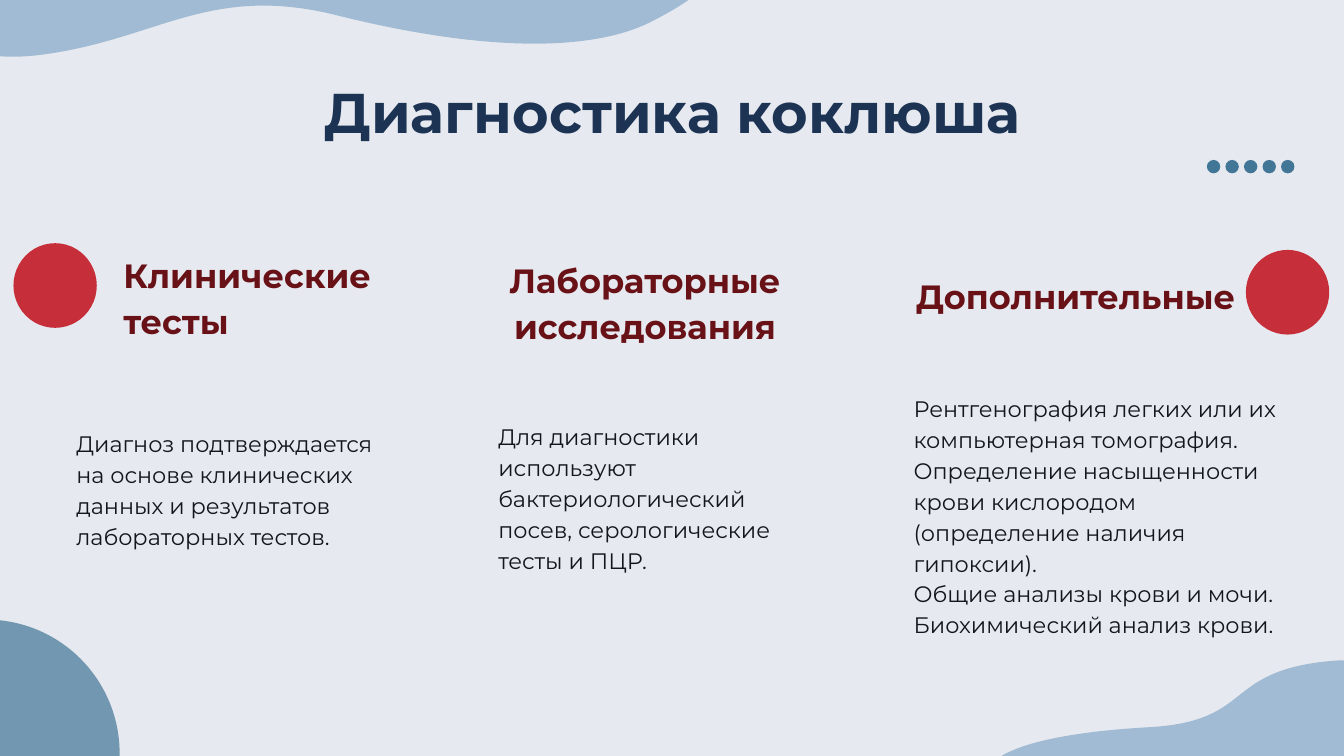
from pptx import Presentation
from pptx.dml.color import RGBColor
from pptx.enum.shapes import MSO_SHAPE as SHAPE
from pptx.enum.text import MSO_ANCHOR as ANCHOR, PP_ALIGN as ALIGN
from pptx.oxml.ns import qn
from pptx.util import Inches, Pt
from lxml import etree

TITLE = dict(size=Pt(30), bold=True, color="1C3354")
HEADING = dict(size=Pt(18), bold=True, color="681218")
BODY = dict(size=Pt(12), bold=False, color="12161D")
HANGING = (0.5, -0.35)


def rgb(value):
    return RGBColor.from_string(value)


class Deck:
    """Holds the style and the current slide."""
    font = "Montserrat"
    spacing = 1.15
    inset = 0.1

    def __init__(self, prs, background):
        self.s = prs.slides.add_slide(prs.slide_layouts[6])
        fill = self.s.background.fill
        fill.solid()
        fill.fore_color.rgb = rgb(background)

    def paint(self, shape, color, alpha=None):
        shape.shadow.inherit = False
        shape.fill.solid()
        shape.fill.fore_color.rgb = rgb(color)
        shape.line.fill.background()
        if alpha:
            clr = shape.fill._xPr.find(".//" + qn("a:srgbClr"))
            etree.SubElement(clr, qn("a:alpha")).set("val", str(alpha * 1000))

    def oval(self, x, y, width, height, color, alpha=None):
        sp = self.s.shapes.add_shape(
            SHAPE.OVAL, *map(Inches, (x, y, width, height)))
        self.paint(sp, color, alpha)

    def wave(self, start, curves, color):
        """Draw a closed outline of cubic curves, each two handles and an end."""
        builder = self.s.shapes.build_freeform(*map(Inches, start))
        builder.add_line_segments(
            [tuple(map(Inches, curve[-1])) for curve in curves], close=True)
        sp = builder.convert_to_shape()
        segments = list(sp._element.iter(qn("a:lnTo")))
        for segment, curve in zip(segments, curves):
            cubic = etree.Element(qn("a:cubicBezTo"))
            for x, y in curve:
                pt = etree.SubElement(cubic, qn("a:pt"))
                pt.set("x", str(Inches(x) - sp.left))
                pt.set("y", str(Inches(y) - sp.top))
            segment.getparent().replace(segment, cubic)
        self.paint(sp, color)

    def text(self, box, lines, style, align=ALIGN.LEFT, anchor=ANCHOR.TOP,
             indent=(0, 0), spacing=spacing, bottom=inset):
        tf = self.s.shapes.add_textbox(*map(Inches, box)).text_frame
        side = Inches(self.inset)
        frame = dict(word_wrap=True, vertical_anchor=anchor, margin_left=side,
                     margin_right=side, margin_top=side,
                     margin_bottom=Inches(bottom))
        for name, value in frame.items():
            setattr(tf, name, value)
        for i, line in enumerate(lines):
            p = tf.add_paragraph() if i else tf.paragraphs[0]
            p.alignment, p.line_spacing = align, spacing
            pPr = p._p.get_or_add_pPr()
            for name, value in zip(("marL", "indent"), indent):
                pPr.set(name, str(Inches(value)))
            r = p.add_run()
            r.text = line
            r.font.name = self.font
            for name, value in style.items():
                if name == "color":
                    r.font.color.rgb = rgb(value)
                else:
                    setattr(r.font, name, value)


def main():
    prs = Presentation()
    prs.slide_width, prs.slide_height = Inches(10), Inches(5.625)
    deck = Deck(prs, "E6E9EF")

    for i in range(5):
        deck.oval(8.98 + i * 0.138, 1.19, 0.1, 0.1, "427697")
    deck.wave((10.6, 5.43), [
        ((10.6, 5.43), (10.65, 4.84), (9.88, 4.92)),
        ((9.1, 5), (9.33, 5.36), (8.57, 5.41)),
        ((7.81, 5.45), (7.36, 5.58), (7.33, 5.77)),
        ((7.29, 5.96), (10.53, 5.9), (10.53, 5.9))], "A1BBD4")
    deck.wave((-1.05, -0.16), [
        ((-1.05, -0.16), (-0.6, 0.52), (0.29, 0.41)),
        ((1.17, 0.3), (1.54, -0.12), (2.49, 0.11)),
        ((3.44, 0.35), (4.34, 0.42), (4.85, 0.16)),
        ((5.36, -0.1), (5.32, -0.23), (5.32, -0.23))], "A1BBD4")
    deck.oval(-1.1, 4.61, 1.99, 1.99, "427697", alpha=70)
    for x, y in ((9.27, 1.86), (0.1, 1.81)):
        deck.oval(x, y, 0.62, 0.63, "C62F39")

    deck.text((0.79, 0.48, 8.43, 0.63), ["Диагностика коклюша"], TITLE,
              ALIGN.CENTER, spacing=1.0)

    deck.text((0.47, 3.07, 2.56, 1.52),
              ["Диагноз подтверждается на основе клинических данных и "
               "результатов лабораторных тестов."], BODY)
    deck.text((3.61, 3.02, 2.56, 1.52),
              ["Для диагностики используют бактериологический посев, "
               "серологические тесты и ПЦР."], BODY)
    deck.text((6.6, 2.76, 3.17, 2.31),
              ["Рентгенография легких или их компьютерная томография.",
               "Определение насыщенности крови кислородом (определение "
               "наличия гипоксии).",
               "Общие анализы крови и мочи.",
               "Биохимический анализ крови."],
              BODY, anchor=ANCHOR.BOTTOM, indent=(0.1, 0), bottom=0.32)

    deck.text((0.82, 1.75, 2.56, 0.89), ["Клинические тесты"], HEADING,
              anchor=ANCHOR.BOTTOM)
    deck.text((3.31, 1.87, 2.83, 0.73), ["Лабораторные", "исследования"],
              HEADING, ALIGN.CENTER, ANCHOR.MIDDLE, HANGING)
    deck.text((6.5, 1.97, 2.86, 0.48), ["Дополнительные"], HEADING,
              ALIGN.CENTER, ANCHOR.BOTTOM, HANGING)

    prs.save("out.pptx")


if __name__ == "__main__":
    main()
